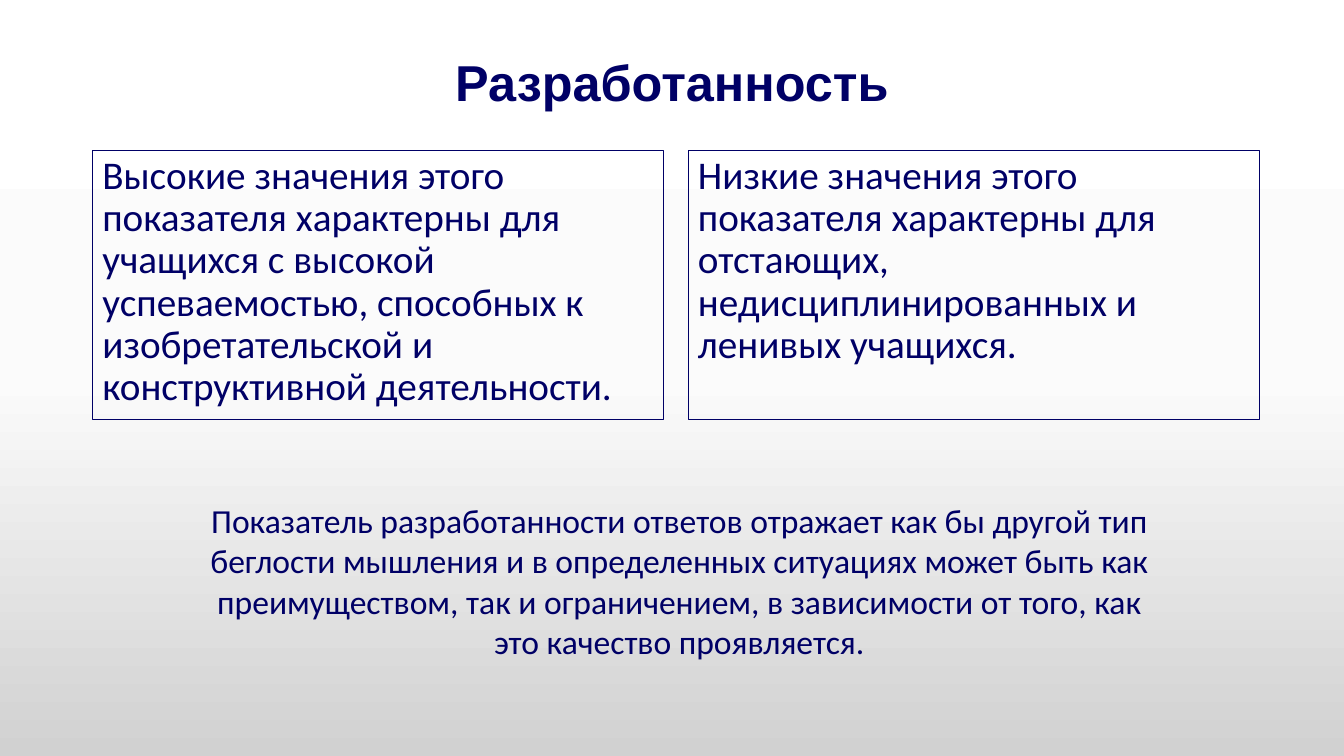
import copy

import pptx
import pptx.dml.color
import pptx.enum.shapes
import pptx.enum.text
import pptx.oxml.ns
import pptx.util

Cm, Pt = pptx.util.Cm, pptx.util.Pt
RGBColor = pptx.dml.color.RGBColor
PP_ALIGN = pptx.enum.text.PP_ALIGN
MSO_ANCHOR = pptx.enum.text.MSO_ANCHOR

TITLE = "Разработанность"
COLUMNS = [
    "Высокие значения этого показателя характерны для учащихся с высокой "
    "успеваемостью, способных к изобретательской и конструктивной деятельности.",
    "Низкие значения этого показателя характерны для отстающих, "
    "недисциплинированных и ленивых учащихся.",
]
SUMMARY = (
    "Показатель разработанности ответов отражает как бы другой тип беглости "
    "мышления и в определенных ситуациях может быть как преимуществом, так и "
    "ограничением, в зависимости от того, как это качество проявляется."
)

NAVY = RGBColor(0x00, 0x00, 0x66)
BACKGROUND = [
    (0, RGBColor(0xFF, 0xFF, 0xFF)),
    (0.5, RGBColor(0xFB, 0xFB, 0xFB)),
    (1, RGBColor(0xD1, 0xD1, 0xD1)),
]

LEFT = Cm(2.33)
COLUMN_TOP, COLUMN_WIDTH, COLUMN_HEIGHT = Cm(3.79), Cm(14.4), Cm(6.78)
COLUMN_STEP = COLUMN_WIDTH + Cm(0.61)


def paint_background(slide):
    fill = slide.background.fill
    fill.gradient()
    fill.gradient_angle = 270
    stops = slide.element.find(".//" + pptx.oxml.ns.qn("a:gsLst"))
    stops.insert(1, copy.deepcopy(stops[0]))
    for stop, (position, color) in zip(fill.gradient_stops, BACKGROUND):
        stop.position = position
        stop.color.rgb = color


def write(tf, text, size, align, font="Calibri", bold=False, spacing=None, before=0):
    tf.word_wrap = True
    p = tf.paragraphs[0]
    p.alignment = align
    p.line_spacing = spacing
    p.space_before = Pt(before)
    r = p.add_run()
    r.text = text
    r.font.name = font
    r.font.size = Pt(size)
    r.font.bold = bold
    r.font.color.rgb = NAVY


def main():
    prs = pptx.Presentation()
    prs.slide_width, prs.slide_height = Cm(33.87), Cm(19.05)
    slide = prs.slides.add_slide(prs.slide_layouts[5])
    paint_background(slide)

    title = slide.shapes.title
    title.left, title.top, title.width, title.height = LEFT, Cm(1.02), Cm(29.21), Cm(3.68)
    tf = title.text_frame
    tf.vertical_anchor = MSO_ANCHOR.TOP
    tf.margin_top = Cm(0.45)
    write(tf, TITLE, 36, PP_ALIGN.CENTER, font="Arial", bold=True, spacing=0.9)

    for i, text in enumerate(COLUMNS):
        sp = slide.shapes.add_shape(
            pptx.enum.shapes.MSO_SHAPE.RECTANGLE,
            LEFT + i * COLUMN_STEP, COLUMN_TOP, COLUMN_WIDTH, COLUMN_HEIGHT)
        sp.shadow.inherit = False
        sp.fill.background()
        sp.line.color.rgb = NAVY
        sp.line.width = Pt(0.75)
        sp.text_frame.vertical_anchor = MSO_ANCHOR.TOP
        write(sp.text_frame, text, 28, PP_ALIGN.LEFT, spacing=0.9, before=10)

    summary = slide.shapes.add_textbox(Cm(4.7), Cm(12.47), Cm(24.84), Cm(5.13))
    write(summary.text_frame, SUMMARY, 24, PP_ALIGN.CENTER)

    prs.save("out.pptx")


if __name__ == "__main__":
    main()
